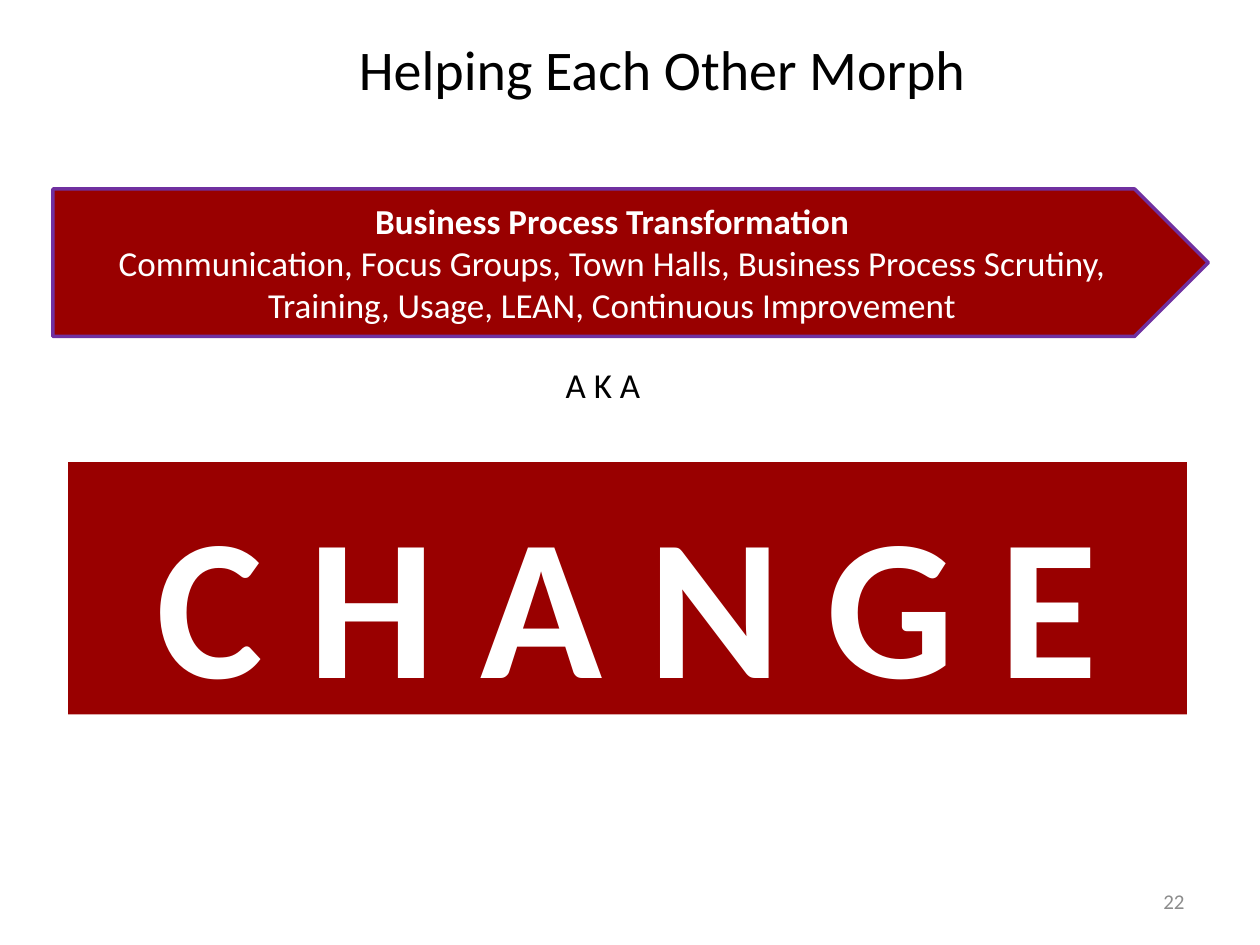
from dataclasses import dataclass

from pptx import Presentation
from pptx.dml.color import RGBColor as Rgb
from pptx.enum.shapes import MSO_SHAPE as Shape
from pptx.enum.text import MSO_ANCHOR as Anchor, PP_ALIGN as Align
from pptx.util import Inches, Pt


@dataclass(frozen=True)
class Theme:
    font: str = "Calibri"
    red: str = "990000"
    edge: str = "7030A0"
    white: str = "FFFFFF"
    black: str = "000000"
    gray: str = "8C8C8C"
    title: int = 32
    body: int = 20
    huge: int = 115
    small: int = 12


LOOK = Theme()
WIDE, HIGH = Inches(10), Inches(7.5)


def place(x, y, w, h):
    """Turn percentages of the slide into lengths."""
    return [int(side * part / 100)
            for side, part in zip((WIDE, HIGH, WIDE, HIGH), (x, y, w, h))]


def write(shape, lines, size, color, align=Align.CENTER, anchor=Anchor.MIDDLE):
    """Fill a shape with (text, bold) lines."""
    frame = shape.text_frame
    frame.word_wrap = True
    frame.vertical_anchor = anchor
    for i, (text, bold) in enumerate(lines):
        para = frame.add_paragraph() if i else frame.paragraphs[0]
        para.text = text
        para.alignment = align
        font = para.font
        font.name, font.size, font.bold = LOOK.font, Pt(size), bold
        font.color.rgb = Rgb.from_string(color)
    return frame


def label(slide, box, text, size, color, **style):
    shape = slide.shapes.add_textbox(*place(*box))
    write(shape, [(text, False)], size, color, **style)


def panel(slide, kind, box, lines, size, edge=None, **style):
    shape = slide.shapes.add_shape(kind, *place(*box))
    shape.shadow.inherit = False
    shape.fill.solid()
    shape.fill.fore_color.rgb = Rgb.from_string(LOOK.red)
    if edge:
        shape.line.color.rgb = Rgb.from_string(edge)
        shape.line.width = Pt(2)
    else:
        shape.line.fill.background()
    return write(shape, lines, size, LOOK.white, **style)


def main():
    deck = Presentation()
    deck.slide_width, deck.slide_height = WIDE, HIGH
    slide = deck.slides.add_slide(deck.slide_layouts[6])

    label(slide, (27.5, 0, 72.4, 14.4), "Helping Each Other Morph",
          LOOK.title, LOOK.black, align=Align.LEFT)
    panel(slide, Shape.PENTAGON, (4.2, 20, 91.7, 15.6), [
        ("Business Process Transformation", True),
        ("Communication, Focus Groups, Town Halls, Business Process Scrutiny, "
         "Training, Usage, LEAN, Continuous Improvement", False),
    ], LOOK.body, edge=LOOK.edge)
    label(slide, (36.4, 37.8, 22.9, 6.67), "A K A", LOOK.body, LOOK.black,
          anchor=Anchor.TOP)
    change = panel(slide, Shape.RECTANGLE, (5.4, 48.9, 88.8, 26.7),
                   [("C H A N G E", True)], LOOK.huge, anchor=Anchor.TOP)
    change.margin_top, change.margin_bottom = Inches(0.12), 0
    label(slide, (71.7, 92.7, 23.3, 5.33), "22", LOOK.small, LOOK.gray,
          align=Align.RIGHT)

    deck.save("out.pptx")


if __name__ == "__main__":
    main()
